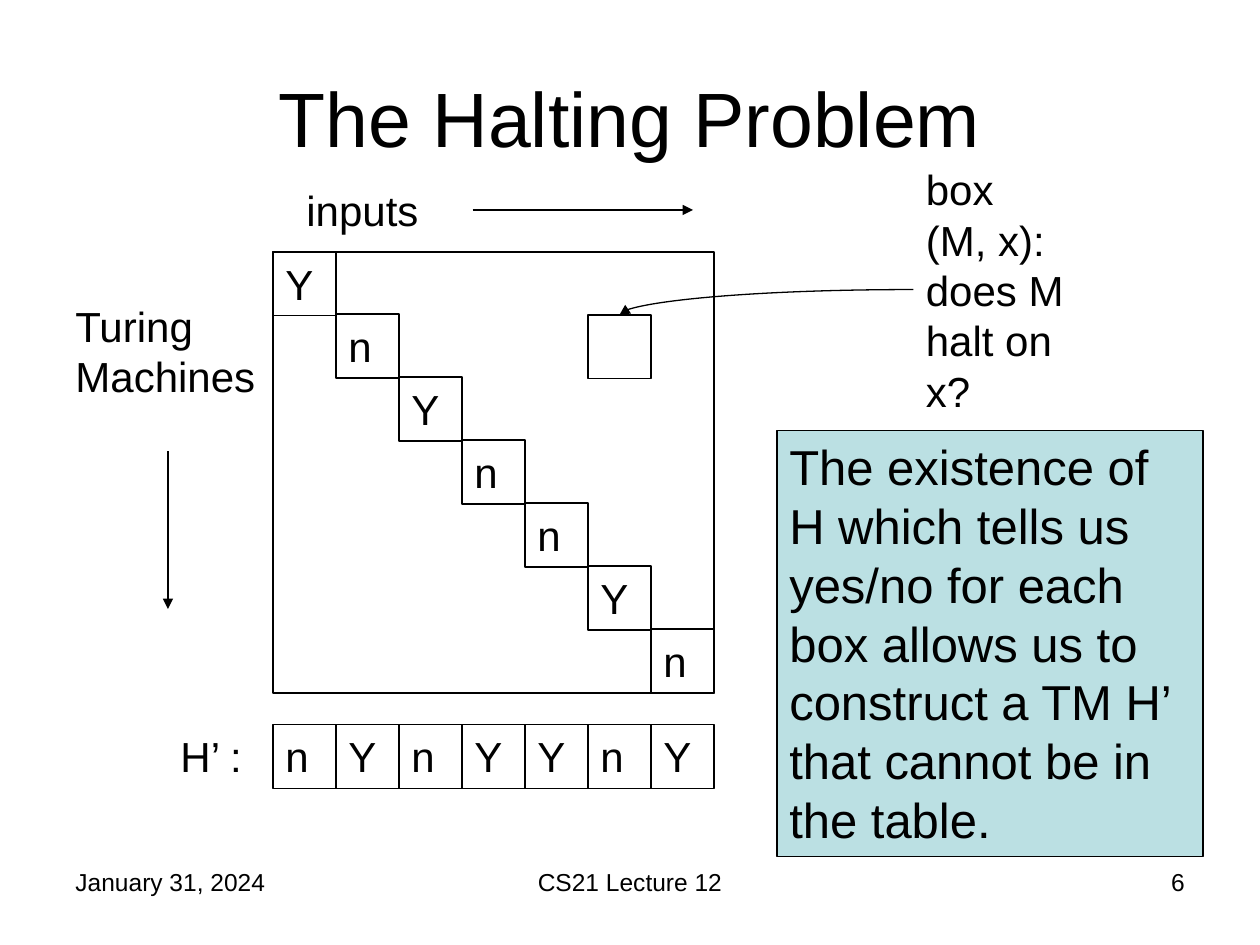
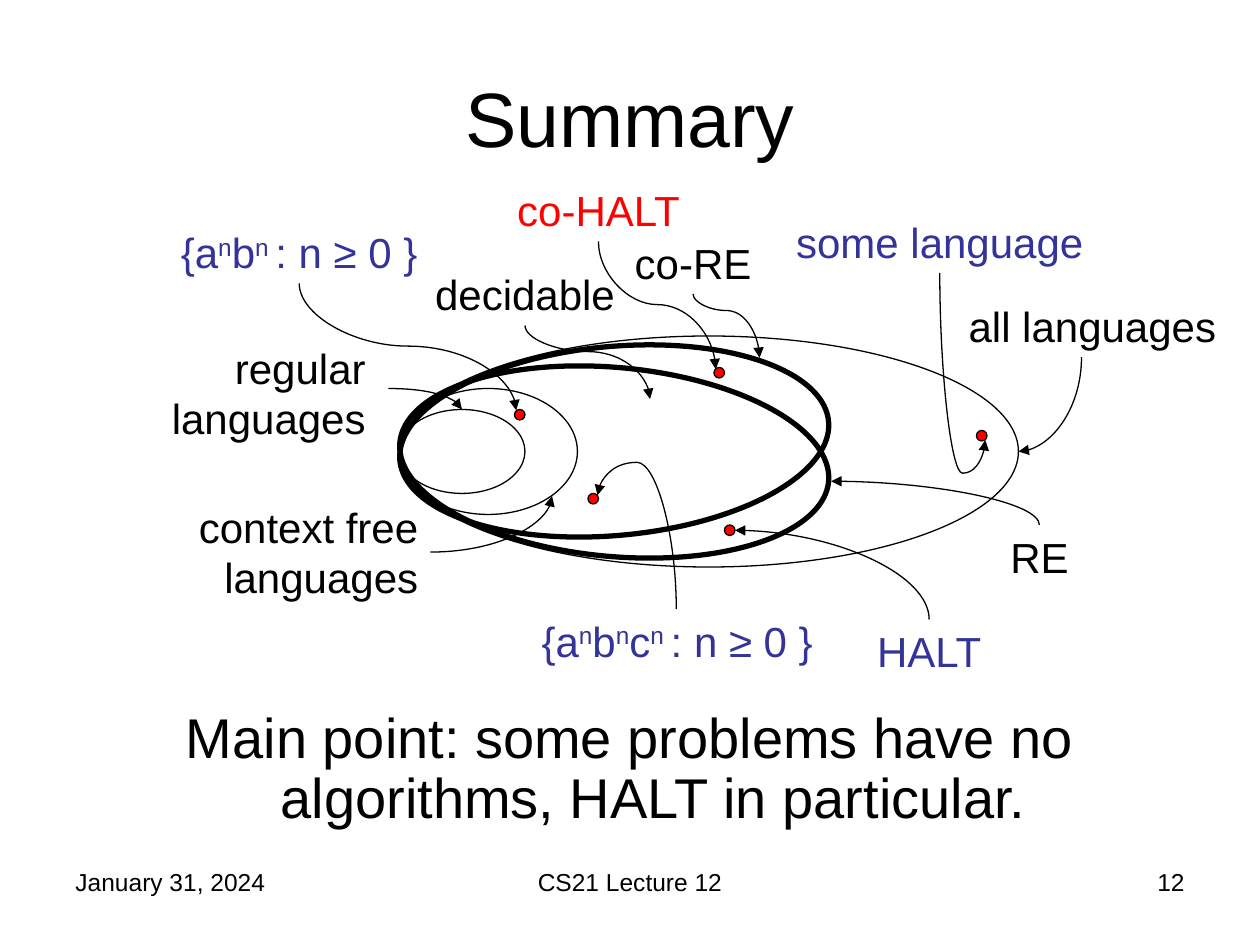
from lxml import etree
from pptx import Presentation
from pptx.dml.color import RGBColor
from pptx.enum import shapes, text
from pptx.oxml.ns import qn
from pptx.util import Pt

BLACK = RGBColor(0x00, 0x00, 0x00)
RED = RGBColor(0xFF, 0x00, 0x00)
INDIGO = RGBColor(0x33, 0x33, 0x99)
PALE_TEAL = RGBColor(0xBB, 0xE0, 0xE3)
LEFT, CENTER, RIGHT = text.PP_ALIGN.LEFT, text.PP_ALIGN.CENTER, text.PP_ALIGN.RIGHT
RECTANGLE, OVAL = shapes.MSO_SHAPE.RECTANGLE, shapes.MSO_SHAPE.OVAL
FONT, LABEL_SIZE, FOOTER_SIZE = "Arial", 24, 14
DATE, COURSE = "January 31, 2024", "CS21 Lecture 12"

# Halting problem: boxes are left, top, width, height
DIAGONAL = "YnYnnYn"
FLIPPED = "nYnYYnY"
GRID_LEFT, GRID_TOP, FLIPPED_TOP, CELL, CELL_HEIGHT = 156, 144, 414, 36, 36.5
HALTING_LABELS = [
    ("Turing Machines", (36, 168, 132, 65)),
    ("inputs", (168, 102, 132, 36)),
    ("H’ :", (96, 414, 60, 36)),
    ("box\v(M, x): does M halt on x?", (522, 90, 102, 151)),
]
HALTING_ARROWS = [((96, 258), (96, 348)), ((270, 120), (396, 120))]
CONCLUSION = ("The existence of H which tells us yes/no for each box allows us "
              "to construct a TM H’ that cannot be in the table.")

# Summary: every class of languages touches the same left edge
CLASS_LEFT = 228
CLASSES = [  # top, width, height, rotation, line width
    (192, 354, 132, 0, 0.75),
    (222, 102, 72, 0, 0.75),
    (234, 72, 48, 0, 0.75),
    (210, 246, 108, 5.2, 3),
    (198, 246, 108, -5.2, 3),
]
DOT = 6
DOTS = [(294, 234), (336, 282), (558, 246), (414, 300), (408, 210)]
SUMMARY_LABELS = [  # superscripts stand between carets
    ("regular languages", (84, 192, 132, 65), RIGHT, BLACK),
    ("context free languages", (78, 283, 168, 65), RIGHT, BLACK),
    ("all languages", (534, 168, 168, 36), RIGHT, BLACK),
    ("decidable", (216, 150, 168, 36), CENTER, BLACK),
    ("RE", (510, 300, 168, 36), CENTER, BLACK),
    ("co-RE", (312, 132, 168, 36), CENTER, BLACK),
    ("co-HALT", (270, 102, 144, 36), CENTER, RED),
    ("{a^n^b^n ^: n ≥ 0 }", (66, 126, 210, 36), CENTER, INDIGO),
    ("{a^n^b^n^c^n ^: n ≥ 0 }", (282, 348, 210, 36), CENTER, INDIGO),
    ("some language", (432, 120, 210, 36), CENTER, INDIGO),
    ("HALT", (486, 354, 90, 36), CENTER, INDIGO),
]
SIDE_CURVES = [
    ((222, 222), (264, 234)),
    ((246, 315.5), (315.5, 283.5)),
]
UPRIGHT_CURVES = [  # start, end, position of the S bend (None for a single bend)
    ((618, 204), (582, 258), None),
    ((594, 300), (475, 275), None),
    ((531, 354), (420, 303), None),
    ((300, 186), (371.5, 228), 0.355),
    ((171, 162), (295, 234.5), 0.494),
    ((386.5, 348), (341.5, 283), 1.29),
    ((537, 156), (563, 251.5), 1.198),
    ((396, 168), (434, 204.5), 0.259),
    ((342, 138), (409, 211), 0.494),
]
MAIN_POINT = "Main point: some problems have no algorithms, HALT in particular."


def points(values):
    return [Pt(value) for value in values]


def write(box, content, size=LABEL_SIZE, align=LEFT, color=BLACK, anchor=text.MSO_ANCHOR.TOP):
    """Fill a box with one paragraph; parts between carets are superscripts."""
    frame = box.text_frame
    frame.word_wrap = True
    frame.vertical_anchor = anchor
    para = frame.paragraphs[0]
    para.alignment = align
    parts = content.split("^")
    if len(parts) == 1:
        para.text = content
    else:
        for index, part in enumerate(parts):
            span = para.add_run()
            span.text = part
            if index % 2:
                span.font._element.set("baseline", "30000")
    for span in para.runs:
        span.font.name = FONT
        span.font.size = Pt(size)
        span.font.color.rgb = color
    return para


def add_label(page, content, place, **style):
    return write(page.shapes.add_textbox(*points(place)), content, **style)


def add_outline(page, kind, place, fill=None, width=0.75):
    shape = page.shapes.add_shape(kind, *points(place))
    shape.shadow.inherit = False
    if fill is None:
        shape.fill.background()
    else:
        shape.fill.solid()
        shape.fill.fore_color.rgb = fill
    shape.line.color.rgb = BLACK
    shape.line.width = Pt(width)
    return shape


def add_arrow(page, start, end, kind=shapes.MSO_CONNECTOR.STRAIGHT):
    arrow = page.shapes.add_connector(kind, *points(start + end))
    arrow.line.color.rgb = BLACK
    arrow.line.width = Pt(0.75)
    properties = arrow._element.spPr
    etree.SubElement(properties.find(qn("a:ln")), qn("a:tailEnd"), type="triangle")
    etree.SubElement(properties, qn("a:effectLst"))
    return arrow


def add_curve(page, start, end, bend=None):
    """Add a curved arrow that leaves its start sideways."""
    curve = add_arrow(page, start, end, shapes.MSO_CONNECTOR.CURVE)
    geometry = curve._element.spPr.find(qn("a:prstGeom"))
    if bend is None:
        geometry.set("prst", "curvedConnector2")
    else:
        etree.SubElement(geometry.find(qn("a:avLst")), qn("a:gd"),
                         name="adj1", fmla=f"val {round(bend * 100000)}")
    return curve


def add_upright_curve(page, start, end, bend):
    """Add a curved arrow that leaves its start up or down, as a turned sideways one."""
    (x1, y1), (x2, y2) = start, end
    middle_x, middle_y = (x1 + x2) / 2, (y1 + y2) / 2
    half_width, half_height = abs(y2 - y1) / 2, abs(x2 - x1) / 2
    rightward, downward = x2 > x1, y2 > y1
    if rightward == downward:
        half_width = -half_width
    curve = add_curve(page, (middle_x - half_width, middle_y - half_height),
                      (middle_x + half_width, middle_y + half_height), bend)
    turn = 270 if rightward else 90
    curve._element.spPr.find(qn("a:xfrm")).set("rot", str(turn * 60000))


def add_page(deck, title, number):
    page = deck.slides.add_slide(deck.slide_layouts[6])
    add_label(page, title, (36, 21.6, 648, 90), size=44, align=CENTER,
              anchor=text.MSO_ANCHOR.MIDDLE)
    for content, left, width, align in [(DATE, 36, 168, LEFT), (COURSE, 246, 228, CENTER),
                                        (str(number), 516, 168, RIGHT)]:
        add_label(page, content, (left, 492, width, 37.5), size=FOOTER_SIZE, align=align)
    return page


def build_halting(deck):
    page = add_page(deck, "The Halting Problem", 6)
    side = CELL * len(DIAGONAL)
    add_outline(page, RECTANGLE, (GRID_LEFT, GRID_TOP, side, side))
    for index, (answer, opposite) in enumerate(zip(DIAGONAL, FLIPPED)):
        left = GRID_LEFT + CELL * index
        diagonal_top = GRID_TOP + CELL * index - (0.5 if index else 0)
        for content, top in [(answer, diagonal_top), (opposite, FLIPPED_TOP)]:
            write(add_outline(page, RECTANGLE, (left, top, CELL, CELL_HEIGHT)), content)
    add_outline(page, RECTANGLE, (GRID_LEFT + 5 * CELL, GRID_TOP + CELL, CELL, CELL_HEIGHT))
    for content, place in HALTING_LABELS:
        add_label(page, content, place)
    for start, end in HALTING_ARROWS:
        add_arrow(page, start, end)
    add_curve(page, (522, 165.5), (354, 180))
    note = add_outline(page, RECTANGLE, (444, 246, 243.5, 243.5), PALE_TEAL)
    write(note, CONCLUSION, size=28)


def build_summary(deck):
    page = add_page(deck, "Summary", 12)
    for top, width, height, rotation, line_width in CLASSES:
        oval = add_outline(page, OVAL, (CLASS_LEFT, top, width, height), width=line_width)
        oval.rotation = rotation
    for left, top in DOTS:
        add_outline(page, OVAL, (left, top, DOT, DOT), RED)
    for content, place, align, color in SUMMARY_LABELS:
        add_label(page, content, place, align=align, color=color)
    for start, end in SIDE_CURVES:
        add_curve(page, start, end)
    for start, end, bend in UPRIGHT_CURVES:
        add_upright_curve(page, start, end, bend)
    para = add_label(page, MAIN_POINT, (36, 402, 648, 80.5), size=32, align=CENTER)
    para.line_spacing = 0.9
    indent = para._p.get_or_add_pPr()
    indent.set("marL", str(Pt(27)))
    indent.set("indent", str(Pt(-27)))


def main():
    deck = Presentation()
    deck.slide_width, deck.slide_height = Pt(720), Pt(540)
    build_halting(deck)
    build_summary(deck)
    deck.save("out.pptx")


if __name__ == "__main__":
    main()
